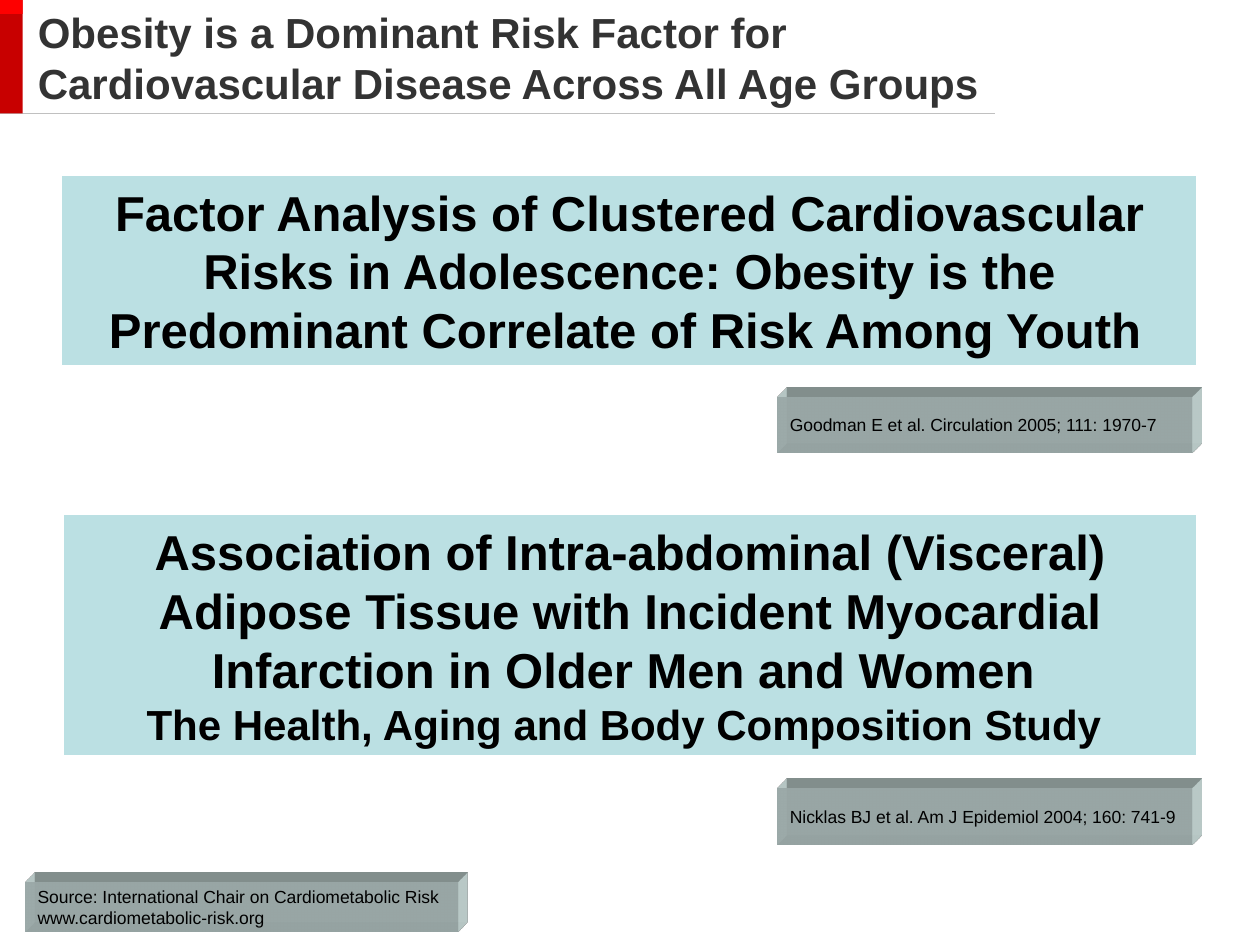
from dataclasses import dataclass

from lxml.etree import SubElement
from pptx import Presentation
from pptx.dml.color import RGBColor as Rgb
from pptx.enum.shapes import MSO_CONNECTOR as Connector, MSO_SHAPE as Shape
from pptx.enum.text import MSO_ANCHOR as Anchor, MSO_AUTO_SIZE as AutoSize, PP_ALIGN as Align
from pptx.oxml import parse_xml
from pptx.oxml.ns import nsdecls, qn
from pptx.util import Inches, Pt


@dataclass(frozen=True)
class Theme:
    font: str = "Arial"
    ink: str = "000000"
    heading: str = "333333"
    rule: str = "C0C0C0"
    red: str = "C80000"
    bright_red: str = "FE0000"
    panel: str = "BBE0E3"
    panel_edge: str = "FFFFFF"
    citation: str = "D8ECEA"
    citation_alpha: int = 89
    title_size: int = 24
    study_size: int = 28
    subtitle_size: int = 24
    space_size: int = 18
    citation_size: int = 10


@dataclass(frozen=True)
class Area:
    left: float
    top: float
    width: float
    height: float


@dataclass(frozen=True)
class Span:
    text: str
    size: int
    bold: bool = False


@dataclass(frozen=True)
class Panel:
    area: Area
    lines: tuple[tuple[Span, ...], ...]


@dataclass(frozen=True)
class Citation:
    area: Area
    lines: tuple[str, ...]
    wrap: bool = True


THEME = Theme()

BARS = (
    (Area(0, 0, 0.18, 0.9), THEME.red),
    (Area(0, 0, 0.18, 0.11), THEME.bright_red),
)

PANELS = (
    Panel(Area(0.49, 1.39, 9.01, 1.51), ((
        Span("Factor Analysis of Clustered Cardiovascular Risks in Adolescence: "
             "Obesity is the Predominant Correlate of Risk Among Youth", THEME.study_size, True),
        Span(" ", THEME.space_size, True),
    ),)),
    Panel(Area(0.5, 4.08, 9, 1.92), (
        (Span("Association of Intra-abdominal (Visceral) Adipose Tissue with Incident "
              "Myocardial Infarction in Older Men and Women ", THEME.study_size, True),),
        (Span("The Health, Aging and Body Composition Study ", THEME.subtitle_size, True),),
    )),
)

CITATIONS = (
    Citation(Area(0.2, 7, 3.43, 0.39), ("Source: International Chair on Cardiometabolic Risk",
                                        "www.cardiometabolic-risk.org"), wrap=False),
    Citation(Area(6.17, 3.15, 3.29, 0.44), ("Goodman E et al. Circulation 2005; 111: 1970-7",)),
    Citation(Area(6.17, 6.26, 3.29, 0.44), ("Nicklas BJ et al. Am J Epidemiol 2004; 160: 741-9",)),
)


def place(shape, area: Area) -> None:
    """Move and size a shape."""
    shape.left, shape.top = Inches(area.left), Inches(area.top)
    shape.width, shape.height = Inches(area.width), Inches(area.height)


def add_span(para, span: Span, color: str) -> None:
    """Append one formatted run to a paragraph."""
    run = para.add_run()
    run.text = span.text
    run.font.name = THEME.font
    run.font.size = Pt(span.size)
    run.font.bold = span.bold
    run.font.color.rgb = Rgb.from_string(color)


def add_box(page, area: Area, fill: str):
    """Add a flat, borderless rectangle."""
    box = page.shapes.add_shape(Shape.RECTANGLE, 0, 0, 0, 0)
    place(box, area)
    box.shadow.inherit = False
    box.fill.solid()
    box.fill.fore_color.rgb = Rgb.from_string(fill)
    box.line.fill.background()
    return box


def write(box, lines: tuple[tuple[Span, ...], ...], align: Align) -> None:
    """Fill a box with vertically centred paragraphs."""
    frame = box.text_frame
    frame.vertical_anchor = Anchor.MIDDLE
    for index, spans in enumerate(lines):
        para = frame.add_paragraph() if index else frame.paragraphs[0]
        para.alignment = align
        for span in spans:
            add_span(para, span, THEME.ink)


def add_title(page, area: Area, lines: tuple[str, ...]) -> None:
    """Place the title and write it with line breaks."""
    title = page.shapes.title
    place(title, area)
    frame = title.text_frame
    frame.word_wrap = True
    frame.auto_size = AutoSize.NONE
    frame.vertical_anchor = Anchor.MIDDLE
    para = frame.paragraphs[0]
    para.alignment = Align.LEFT
    for index, line in enumerate(lines):
        if index:
            para.add_line_break()
        add_span(para, Span(line, THEME.title_size, True), THEME.heading)


def add_rule(page, width: float, top: float) -> None:
    """Draw the thin rule under the title."""
    rule = page.shapes.add_connector(
        Connector.STRAIGHT, Inches(0), Inches(top), Inches(width), Inches(top))
    rule.line.color.rgb = Rgb.from_string(THEME.rule)
    rule.line.width = Pt(0.75)
    SubElement(rule._element.spPr, qn("a:effectLst"))


def add_panel(page, panel: Panel) -> None:
    """Add a study panel with centred text."""
    box = add_box(page, panel.area, THEME.panel)
    box.line.color.rgb = Rgb.from_string(THEME.panel_edge)
    box.line.width = Pt(0.75)
    write(box, panel.lines, Align.CENTER)
    box.text_frame.word_wrap = True
    box.text_frame.auto_size = AutoSize.SHAPE_TO_FIT_TEXT


def extrude(box, color: str) -> None:
    """Give a box a shallow oblique depth."""
    namespace = nsdecls("a")
    box._element.spPr.append(parse_xml(
        f'<a:scene3d {namespace}><a:camera prst="legacyObliqueTopRight"/>'
        '<a:lightRig rig="legacyFlat3" dir="b"/></a:scene3d>'))
    box._element.spPr.append(parse_xml(
        f'<a:sp3d {namespace} extrusionH="201600" prstMaterial="legacyMatte">'
        f'<a:extrusionClr><a:srgbClr val="{color}"/></a:extrusionClr></a:sp3d>'))


def add_citation(page, citation: Citation) -> None:
    """Add a translucent raised citation plate."""
    box = add_box(page, citation.area, THEME.citation)
    color = box._element.spPr.find(qn("a:solidFill"))[0]
    SubElement(color, qn("a:alpha"), val=str(THEME.citation_alpha * 1000))
    extrude(box, THEME.citation)
    write(box, tuple((Span(line, THEME.citation_size),) for line in citation.lines), Align.LEFT)
    box.text_frame.word_wrap = citation.wrap


def main() -> None:
    """Build and save the slide."""
    deck = Presentation()
    deck.slide_width, deck.slide_height = Inches(10), Inches(7.5)
    page = deck.slides.add_slide(deck.slide_layouts.get_by_name("Title Only"))
    add_rule(page, 7.9, 0.9)
    for area, color in BARS:
        add_box(page, area, color)
    add_title(page, Area(0.2, 0, 9.06, 0.91), (
        "Obesity is a Dominant Risk Factor for ",
        "Cardiovascular Disease Across All Age Groups"))
    for panel in PANELS:
        add_panel(page, panel)
    for citation in CITATIONS:
        add_citation(page, citation)
    deck.save("out.pptx")


if __name__ == "__main__":
    main()
